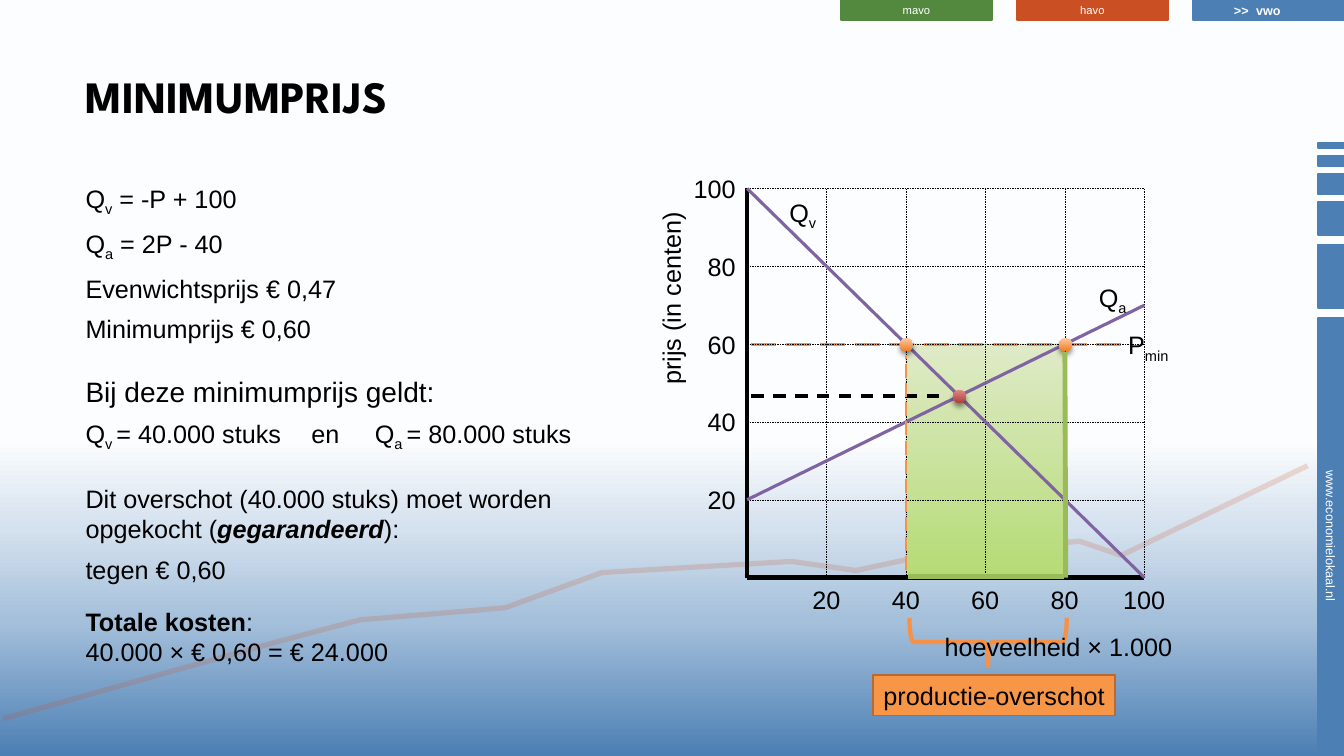
from lxml import etree
from pptx import Presentation
from pptx.dml.color import RGBColor
from pptx.enum.dml import MSO_LINE
from pptx.enum.shapes import MSO_CONNECTOR, MSO_SHAPE
from pptx.enum.text import MSO_ANCHOR, PP_ALIGN
from pptx.oxml.ns import qn
from pptx.util import Inches, Pt

BLACK = RGBColor(0x00, 0x00, 0x00)
WHITE = RGBColor(0xFF, 0xFF, 0xFF)
BLUE = RGBColor(0x4C, 0x7F, 0xB4)
RED = RGBColor(0xCA, 0x4F, 0x22)
GREEN = RGBColor(0x52, 0x89, 0x3F)
LIME = RGBColor(0x9B, 0xBB, 0x59)
PALE = RGBColor(0xBE, 0xCE, 0x99)
ORANGE = RGBColor(0xF7, 0x91, 0x46)
AMBER = RGBColor(0xF7, 0x96, 0x46)
BROWN = RGBColor(0xB7, 0x6B, 0x34)
PURPLE = RGBColor(0x80, 0x64, 0xA2)
SKY = [(0, BLUE), (18, RGBColor(0xA5, 0xC0, 0xDB)), (30, RGBColor(0xD4, 0xE1, 0xEE)),
       (42, RGBColor(0xFC, 0xFD, 0xFE)), (50, WHITE)]
MEADOW = [(0, RGBColor(0xDF, 0xEA, 0xC7)), (100, RGBColor(0xB5, 0xDB, 0x75))]
PEACH = [(0, RGBColor(0xFF, 0xC9, 0xA4)), (100, RGBColor(0xEE, 0x7E, 0x22))]
ROSE = [(0, RGBColor(0xE1, 0x87, 0x85)), (100, RGBColor(0xA7, 0x42, 0x3F))]

RECT, OVAL, BRACE = MSO_SHAPE.RECTANGLE, MSO_SHAPE.OVAL, MSO_SHAPE.RIGHT_BRACE
STRAIGHT = MSO_CONNECTOR.STRAIGHT
DASH, LONG = MSO_LINE.DASH, MSO_LINE.LONG_DASH
TOP, MIDDLE = MSO_ANCHOR.TOP, MSO_ANCHOR.MIDDLE
LEFT, CENTER = PP_ALIGN.LEFT, PP_ALIGN.CENTER

COLS, ROWS = 13.33, 7.5
LEFT_X, BASE_Y = 7.41, 5.73
SPAN_X, SPAN_Y = 3.94, 3.86
SUB = {"sub": True}
BOLD = {"bold": True}


def assign(target, values):
    for key, value in values.items():
        setattr(target, key, value)


def add(parent, tag, **values):
    return etree.SubElement(parent, qn(tag), {k: str(v) for k, v in values.items()})


def spot(amount, price):
    return LEFT_X + SPAN_X * amount / 100, BASE_Y - SPAN_Y * price / 100


class Board:
    def __init__(self):
        self.deck = Presentation()
        self.deck.slide_width, self.deck.slide_height = Inches(COLS), Inches(ROWS)
        self.slide = self.deck.slides.add_slide(self.deck.slide_layouts[5])
        self.shapes = self.slide.shapes
        self.font = {"name": "Arial", "size": 18, "bold": False, "italic": False}

    def cells(self, *counts):
        col = self.deck.slide_width / COLS
        return [round(count * col) for count in counts]

    def blend(self, fill, owner, stops, angle):
        fill.gradient()
        grad = owner.find(".//" + qn("a:gradFill"))
        for child in list(grad):
            grad.remove(child)
        group = add(grad, "a:gsLst")
        for place, color in stops:
            add(add(group, "a:gs", pos=place * 1000), "a:srgbClr", val=color)
        add(grad, "a:lin", ang=angle * 60000, scaled=0)

    def backdrop(self, stops):
        self.blend(self.slide.background.fill, self.slide.element, stops, 270)

    def stroke(self, shape, color, width, dash=None, alpha=None):
        shape.line.color.rgb = color
        assign(shape.line, {"width": Pt(width), "dash_style": dash})
        if alpha:
            ink = shape.element.find(".//" + qn("a:ln") + "//" + qn("a:srgbClr"))
            add(ink, "a:alpha", val=alpha * 1000)

    def letter(self, par, runs, style, color):
        for item in [runs] if isinstance(runs, str) else runs:
            words, extra = (item, {}) if isinstance(item, str) else item
            if words == "\n":
                par.add_line_break()
                continue
            look = {**self.font, **style, **extra}
            sub = look.pop("sub", False)
            look["size"] = Pt(look["size"])
            run = par.add_run()
            run.text = words
            assign(run.font, look)
            run.font.color.rgb = color
            if sub:
                run.font._element.set("baseline", "-25000")

    def title(self, box, words, **style):
        shape = self.shapes.title
        assign(shape, dict(zip(("left", "top", "width", "height"), self.cells(*box))))
        shape.text_frame.vertical_anchor = MIDDLE
        par = shape.text_frame.paragraphs[0]
        par.alignment = LEFT
        self.letter(par, words, style, BLACK)

    def label(self, box, runs, color=BLACK, turn=0, **style):
        shape = self.shapes.add_textbox(*self.cells(*box))
        shape.rotation = turn
        assign(shape.text_frame, {"word_wrap": False, "vertical_anchor": TOP})
        self.letter(shape.text_frame.paragraphs[0], runs, style, color)

    def body(self, box, items):
        frame = self.shapes.add_textbox(*self.cells(*box)).text_frame
        frame.word_wrap = True
        for index, (before, size, runs, *tabs) in enumerate(items):
            par = frame.paragraphs[0] if index == 0 else frame.add_paragraph()
            assign(par, {"space_before": Pt(before), "space_after": Pt(3.4)})
            if tabs:
                stops = add(par._p.get_or_add_pPr(), "a:tabLst")
                for place in tabs:
                    add(stops, "a:tab", pos=self.cells(place)[0], algn="l")
            self.letter(par, runs, {"size": size}, BLACK)

    def shape(self, kind, box, fill=None, line=None, turn=0, cast=False):
        shape = self.shapes.add_shape(kind, *self.cells(*box))
        shape.rotation = turn
        shape.shadow.inherit = False
        if isinstance(fill, list):
            self.blend(shape.fill, shape.element, fill, 90)
        elif fill is None:
            shape.fill.background()
        else:
            shape.fill.solid()
            shape.fill.fore_color.rgb = fill
        if line:
            self.stroke(shape, *line)
        else:
            shape.line.fill.background()
        if cast:
            shade = add(shape.element.spPr.find(qn("a:effectLst")), "a:outerShdw",
                        blurRad=Pt(4), dist=Pt(3), dir=5400000, rotWithShape=0)
            add(add(shade, "a:srgbClr", val=BLACK), "a:alpha", val=46000)
        return shape

    def panel(self, box, words, fill, line, color=WHITE, turn=0, pad=0, **style):
        frame = self.shape(RECT, box, fill, line, turn).text_frame
        assign(frame, {"margin_top": Inches(pad), "margin_bottom": Inches(pad),
                       "vertical_anchor": MIDDLE, "word_wrap": True})
        frame.paragraphs[0].alignment = CENTER
        if words:
            self.letter(frame.paragraphs[0], words, style, color)

    def line(self, start, end, *pen):
        link = self.shapes.add_connector(STRAIGHT, *self.cells(*start, *end))
        self.stroke(link, *pen)
        add(link.element.spPr, "a:effectLst")

    def trend(self, points, *pen):
        first, *rest = [self.cells(*point) for point in points]
        outline = self.shapes.build_freeform(*first)
        outline.add_line_segments(rest, close=False)
        shape = outline.convert_to_shape()
        shape.shadow.inherit = False
        shape.fill.background()
        self.stroke(shape, *pen)

    def dot(self, amount, price, fill):
        x, y = spot(amount, price)
        self.shape(OVAL, (x - 0.06, y - 0.06, 0.13, 0.13), fill, cast=True)


def main():
    board = Board()
    board.backdrop(SKY)
    for middle, height, words in [(5.32, 4.33, "www.economielokaal.nl"), (2.74, 0.63, ""),
                                  (2.17, 0.33, ""), (1.83, 0.2, ""), (1.6, 0.1, ""),
                                  (1.44, 0.05, "")]:
        box = (13.2 - height / 2, middle - 0.13, height, 0.26)
        board.panel(box, words, BLUE, (BLUE, 1.25), turn=90, size=9)
    for index, (words, color, style) in enumerate([
            ("mavo", GREEN, {"size": 8}), ("havo", RED, {"size": 8}),
            ("vwo", BLUE, {"size": 9, "bold": True})]):
        board.panel((8.34 + 1.745 * index, 0, 1.5, 0.2), words, color, (color, 1.25), **style)
    board.trend([(12.97, 4.62), (11.12, 5.51), (10.71, 5.37), (9.28, 5.49), (8.49, 5.66),
                 (7.85, 5.57), (5.97, 5.68), (5.01, 6.03), (3.57, 6.15), (2.7, 6.38),
                 (0.03, 7.13)], RED, 3.75, None, 19)
    board.label((12.14, -0.02, 0.35, 0.25), ">>", WHITE, size=9, bold=True)

    board.title((0.75, 0.5, 10.02, 0.89), "MINIMUMPRIJS",
                name="League Spartan", size=32, bold=True)
    board.body((0.75, 1.77, 5.4, 5.15), [
        (0, 18, ["Q", ("v", SUB), " = -P + 100"]),
        (4, 18, ["Q", ("a", SUB), " = 2P - 40"]),
        (4, 18, "Evenwichtsprijs € 0,47"),
        (4, 18, "Minimumprijs € 0,60"),
        (18.5, 20, "Bij deze minimumprijs geldt:"),
        (4, 18, ["Q", ("v ", SUB), "= 40.000 stuks\ten\tQ", ("a ", SUB), "= 80.000 stuks"],
         2.24, 2.87),
        (18.5, 18, ["Dit overschot (40.000 stuks) moet worden opgekocht (",
                    ("gegarandeerd", {"bold": True, "italic": True}), "):"]),
        (4, 18, "tegen € 0,60"),
        (12, 18, [("Totale kosten", BOLD), ":", "\n", "40.000 × € 0,60 = € 24.000"]),
    ])

    left, top = spot(40, 60)
    right, base = spot(80, 0)
    board.shape(RECT, (left, top, right - left, base - top), MEADOW, (PALE, 0.75, None, 60))
    board.shape(BRACE, (9.56, 5.59, 0.48, 1.56), line=(ORANGE, 3), turn=90)
    board.panel((8.66, 6.7, 2.4, 0.4), "productie-overschot", AMBER, (BROWN, 1.25),
                BLACK, pad=0.05)
    board.line(spot(1, 60), spot(95, 60), ORANGE, 2.25, LONG)
    for end in [(0, 100), (100, 0)]:
        board.line(spot(0, 0), spot(*end), BLACK, 3)
    for tick in range(20, 101, 20):
        board.line(spot(0, tick), spot(100, tick), BLACK, 0.25, DASH)
        board.line(spot(tick, 0), spot(tick, 100), BLACK, 0.25, DASH)
        x, y = spot(tick, tick)
        wide = 0.62 if tick == 100 else 0.48
        board.label((7.4 - wide, y - 0.2, wide, 0.4), str(tick))
        board.label((x - wide / 2, 5.75, wide, 0.4), str(tick))
    board.label((9.27, 6.21, 2.48, 0.4), "hoeveelheid × 1.000")
    board.label((5.69, 2.75, 1.93, 0.4), "prijs (in centen)", turn=270)
    for box, name, mark in [((11.09, 3.22, 0.64, 0.4), "P", "min"),
                            ((7.73, 1.91, 0.48, 0.4), "Q", "v"),
                            ((10.8, 2.75, 0.49, 0.4), "Q", "a")]:
        board.label(box, [name, (mark, SUB)])
    for start, end in [((0, 100), (100, 0)), ((0, 20), (100, 70))]:
        board.line(spot(*start), spot(*end), PURPLE, 2.25)
    board.line(spot(1, 46.67), spot(50.3, 46.67), BLACK, 2.25, DASH)
    for amount, price, fill in [(53.33, 46.67, ROSE), (40, 60, PEACH), (80, 60, PEACH)]:
        board.dot(amount, price, fill)
    for amount in (40, 80):
        board.line(spot(amount, 2), spot(amount, 57), ORANGE, 1.25, LONG)
    board.line(spot(40.6, 0.3), spot(79.7, 0.3), LIME, 3.5)
    board.line(spot(80, 58), spot(80.2, 0), LIME, 3.5)
    board.deck.save("out.pptx")


if __name__ == "__main__":
    main()
